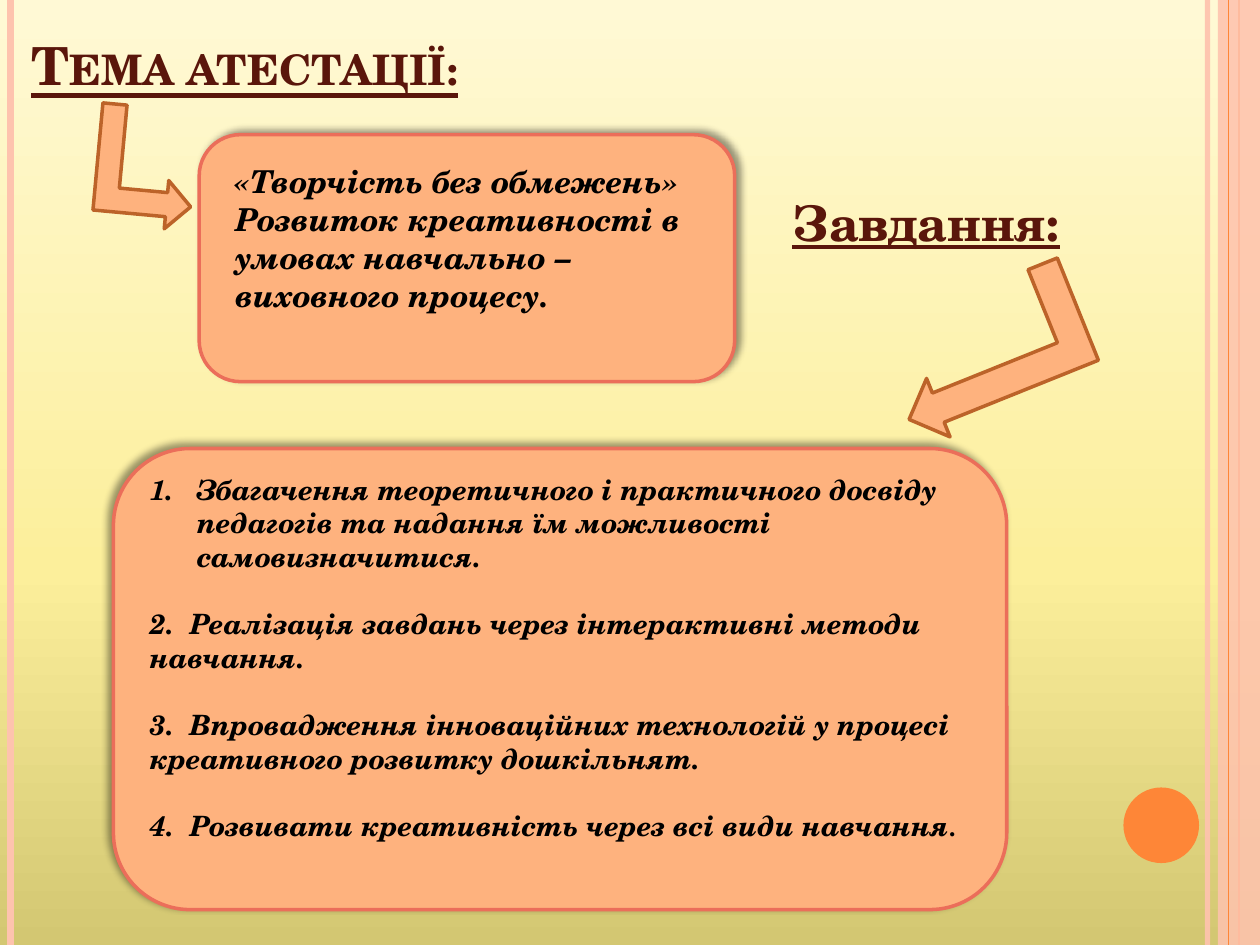
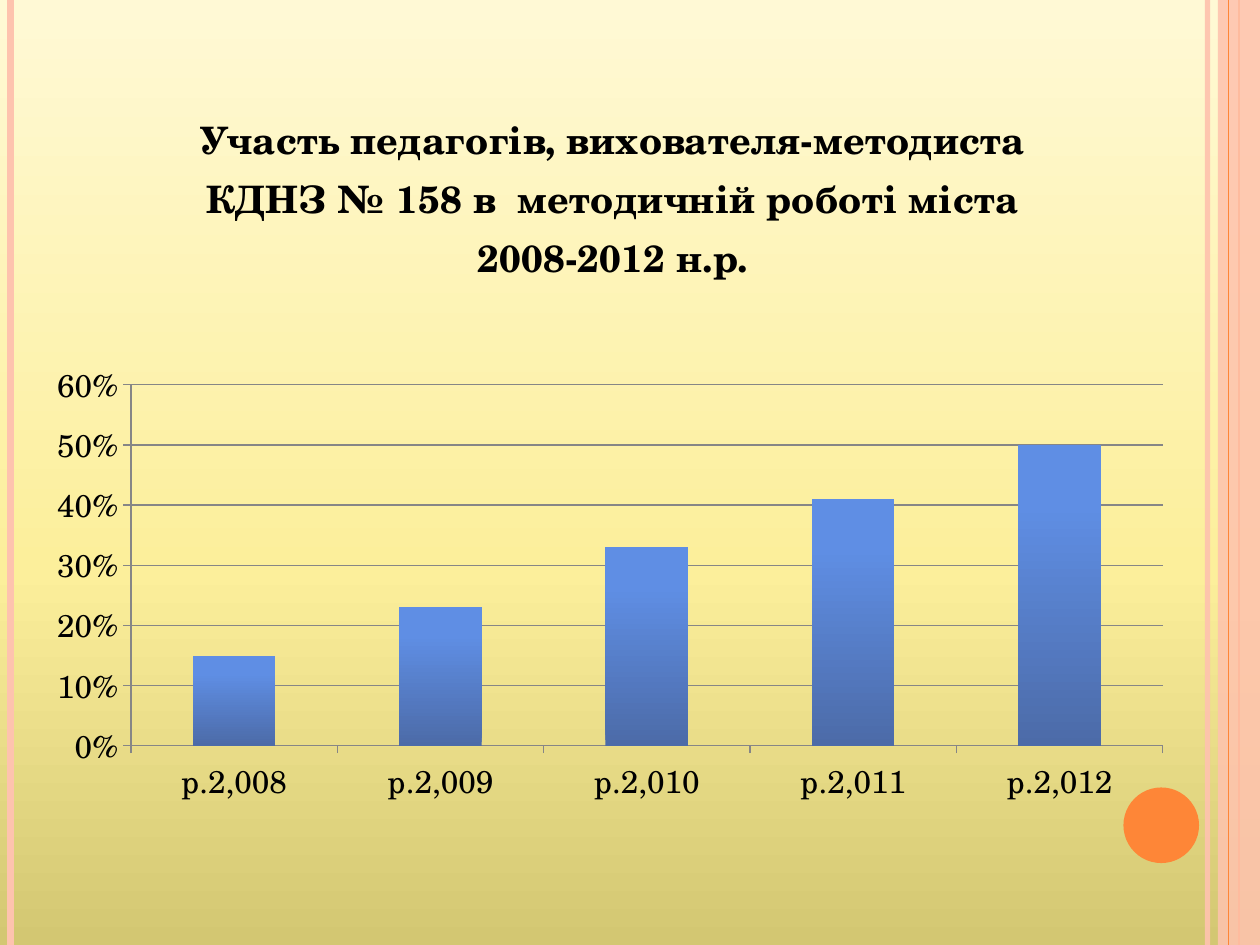
from lxml import etree
from pptx import Presentation
from pptx.chart.data import CategoryChartData
from pptx.dml.color import RGBColor
from pptx.enum import chart as charts, shapes, text
from pptx.oxml import ns
from pptx.util import Pt

FONT = "TeX Gyre Schola"
WIDTH, HEIGHT = 720, 540
COLORS = {
    "rose": "FEC3AE", "orange": "FE8637", "heading": "5A160B", "text": "000000",
    "card": "FEB27E", "card_line": "EB6E5A", "arrow_line": "BC6329", "axis": "868686",
}
BACKGROUND_STOPS = [(0, "D3C772"), (40, "FCEF9B"), (100, "FFF9D5")]
BAR_STOPS = [(0, "4C6BA8"), (80, "5F8EE4"), (100, "5F8EE4")]
TOPIC = [
    "«Творчість без обмежень»",
    "Розвиток креативності в умовах навчально – виховного процесу.",
]
TASKS = [
    "Збагачення теоретичного і практичного досвіду педагогів та надання їм "
    "можливості самовизначитися.",
    "2.  Реалізація завдань через інтерактивні методи навчання.",
    "3.  Впровадження інноваційних технологій у процесі креативного розвитку дошкільнят.",
    "4.  Розвивати креативність через всі види навчання",
]
CHART_TITLE = [
    "Участь педагогів, вихователя-методиста",
    "КДНЗ № 158 в  методичній роботі міста",
    "2008-2012 н.р.",
]
PARTICIPATION = {"р.2,008": 0.15, "р.2,009": 0.23, "р.2,010": 0.33,
                 "р.2,011": 0.41, "р.2,012": 0.5}


# Shared helpers
def rgb(name):
    return RGBColor.from_string(COLORS[name])


def add_xml(parent, tag, **attributes):
    child = etree.SubElement(parent, ns.qn(tag))
    for key, value in attributes.items():
        child.set(key, str(value))
    return child


def set_alpha(shape, percent):
    color = next(shape.element.iter(ns.qn("a:srgbClr")))
    add_xml(color, "a:alpha", val=percent * 1000)


def set_gradient(fill, root, stops):
    """Fill upwards, from the bottom stop to the top one."""
    fill.gradient()
    gradient = next(root.iter(ns.qn("a:gradFill")))
    for child in list(gradient):
        gradient.remove(child)
    stop_list = add_xml(gradient, "a:gsLst")
    for position, color in stops:
        stop = add_xml(stop_list, "a:gs", pos=position * 1000)
        add_xml(stop, "a:srgbClr", val=color)
    add_xml(gradient, "a:lin", ang=270 * 60000, scaled=0)


def style_font(font, size, color="text", bold=True, italic=False, underline=False):
    font.name, font.size = FONT, Pt(size)
    font.bold, font.italic, font.underline = bold, italic, underline
    font.color.rgb = rgb(color)


def add_shape(slide, kind, box, fill, line=None):
    shape = slide.shapes.add_shape(kind, *map(Pt, box))
    shape.shadow.inherit = False
    shape.fill.solid()
    shape.fill.fore_color.rgb = rgb(fill)
    if line:
        shape.line.color.rgb = rgb(line)
        shape.line.width = Pt(2)
    else:
        shape.line.fill.background()
    return shape


def add_text(slide, box, lines, size, gap=0, **style):
    frame = slide.shapes.add_textbox(*map(Pt, box)).text_frame
    frame.word_wrap = True
    for index, line in enumerate(lines):
        paragraph = frame.add_paragraph() if index else frame.paragraphs[0]
        paragraph.text = line
        paragraph.space_before = Pt(gap if index else 0)
        style_font(paragraph.font, size, **style)
    return frame


def add_rule(slide, x, color, width):
    rule = slide.shapes.add_connector(
        shapes.MSO_CONNECTOR.STRAIGHT, Pt(x), Pt(0), Pt(x), Pt(HEIGHT))
    rule.line.color.rgb = rgb(color)
    rule.line.width = Pt(width)
    add_xml(rule.element.spPr, "a:effectLst")
    return rule


# Background, side bands and page dot of every slide
def add_base_slide(presentation):
    slide = presentation.slides.add_slide(presentation.slide_layouts[6])
    set_gradient(slide.background.fill, slide.element, BACKGROUND_STOPS)
    set_alpha(add_rule(slide, 690, "rose", 3), 93)
    add_rule(slide, 6, "rose", 4.5)
    add_rule(slide, 708, "orange", 1.5)
    band = add_shape(slide, shapes.MSO_SHAPE.RECTANGLE, (696, 0, 24, HEIGHT), "rose")
    set_alpha(band, 87)
    add_rule(slide, 702, "orange", 0.75)
    add_shape(slide, shapes.MSO_SHAPE.OVAL, (642, 450, 43.2, 43.2), "orange")
    return slide


# Rounded card with a soft shadow and text set inside it
def add_card(slide, box, shadow_angle, inset, lines, size, gap=0):
    card = add_shape(slide, shapes.MSO_SHAPE.ROUNDED_RECTANGLE, box, "card", "card_line")
    effects = card.element.spPr.find(ns.qn("a:effectLst"))
    shadow = add_xml(effects, "a:outerShdw", blurRad=Pt(4), dist=Pt(3),
                     dir=shadow_angle * 60000, algn="ctr", rotWithShape=0)
    add_xml(add_xml(shadow, "a:srgbClr", val="000000"), "a:alpha", val=40000)
    left, top, width, height = box
    dx, dy, text_width = inset
    text_box = (left + dx, top + dy, text_width, height - 2 * dy)
    return add_text(slide, text_box, lines, size, gap, italic=True)


def add_bent_arrow(slide, box, rotation, flip=False):
    arrow = add_shape(slide, shapes.MSO_SHAPE.BENT_UP_ARROW, box, "card", "arrow_line")
    arrow.rotation = rotation
    if flip:
        arrow.element.spPr.find(ns.qn("a:xfrm")).set("flipV", "1")


# Slide 1: topic and tasks
def build_topic_slide(presentation):
    slide = add_base_slide(presentation)
    heading = add_text(slide, (10.8, 7.2, 309.6, 51.1), ["Тема атестації:"], 30,
                       color="heading", underline=True)
    heading.vertical_anchor = text.MSO_ANCHOR.BOTTOM
    heading.paragraphs[0].runs[0].font.underline = True
    heading.paragraphs[0].runs[0]._r.get_or_add_rPr().set("cap", "small")

    add_card(slide, (113.8, 77, 306, 141.1), 315, (13.6, 12.2, 278), TOPIC, 18)
    add_text(slide, (445.7, 106.6, 238.3, 41), ["Завдання:"], 28,
             color="heading", underline=True)
    tasks = add_card(slide, (64.8, 256.3, 510.5, 263.5), 225, (13.7, 10.1, 497.5),
                     TASKS, 16, gap=19.2)

    # Numbered first task, smaller full stop after the last one
    numbered = tasks.paragraphs[0]._p.get_or_add_pPr()
    numbered.set("marL", str(Pt(27)))
    numbered.set("indent", str(Pt(-27)))
    add_xml(numbered, "a:buFont", typeface="+mj-lt")
    add_xml(numbered, "a:buAutoNum", type="arabicPeriod")
    # Bullet settings come before the default run properties
    defaults = numbered.find(ns.qn("a:defRPr"))
    if defaults is not None:
        numbered.append(defaults)
    full_stop = tasks.paragraphs[-1].add_run()
    full_stop.text = "."
    full_stop.font.size = Pt(14)

    add_bent_arrow(slide, (49, 67.7, 68.4, 55.4), 95.3)
    add_bent_arrow(slide, (529.2, 145.4, 72, 113), 68.1, flip=True)


def set_layout(parent, values, inner=False):
    """Place a chart part by fractions of the chart area."""
    for old in parent.findall(ns.qn("c:layout")):
        parent.remove(old)
    layout = etree.Element(ns.qn("c:layout"))
    manual = add_xml(layout, "c:manualLayout")
    if inner:
        add_xml(manual, "c:layoutTarget", val="inner")
    for key in "xy":
        add_xml(manual, f"c:{key}Mode", val="edge")
    for key, value in values.items():
        add_xml(manual, f"c:{key}", val=value)
    title_text = parent.find(ns.qn("c:tx"))
    parent.insert(0 if title_text is None else 1, layout)


# Participation column chart
def add_participation_chart(slide, box):
    data = CategoryChartData(number_format="0%")
    data.categories = list(PARTICIPATION)
    data.add_series(" ".join(CHART_TITLE), list(PARTICIPATION.values()))
    chart = slide.shapes.add_chart(
        charts.XL_CHART_TYPE.COLUMN_CLUSTERED, *map(Pt, box), data).chart
    chart.has_legend = False
    style_font(chart.font, 18, bold=False)

    chart.has_title = True
    frame = chart.chart_title.text_frame
    for index, line in enumerate(CHART_TITLE):
        paragraph = frame.add_paragraph() if index else frame.paragraphs[0]
        run = paragraph.add_run()
        run.text = line
        paragraph.alignment = text.PP_ALIGN.CENTER
        paragraph.line_spacing = 1.3
        style_font(paragraph.font, 21.6)
        style_font(run.font, 21.6)
    chart.chart_title.include_in_layout = False
    set_layout(next(chart.element.iter(ns.qn("c:title"))), {"x": 0.14, "y": 0.05})
    set_layout(next(chart.element.iter(ns.qn("c:plotArea"))),
               {"x": 0.083, "y": 0.424, "w": 0.897, "h": 0.479}, inner=True)

    plot = chart.plots[0]
    plot.gap_width = 150
    plot.vary_by_categories = False
    set_gradient(plot.series[0].format.fill, chart.element, BAR_STOPS)

    values = chart.value_axis
    values.minimum_scale, values.maximum_scale, values.major_unit = 0, 0.6, 0.1
    values.tick_labels.number_format = "0%"
    values.tick_labels.number_format_is_linked = False
    values.has_major_gridlines = True
    for axis in (values, chart.category_axis):
        axis.major_tick_mark = charts.XL_TICK_MARK.OUTSIDE
    for lined in (values, chart.category_axis, values.major_gridlines):
        lined.format.line.color.rgb = rgb("axis")
        lined.format.line.width = Pt(0.75)


# Slide 2: participation in methodical work
def build_chart_slide(presentation):
    slide = add_base_slide(presentation)
    add_participation_chart(slide, (20.2, 37.4, 657.4, 430.6))


def main():
    presentation = Presentation()
    presentation.slide_width, presentation.slide_height = Pt(WIDTH), Pt(HEIGHT)
    build_topic_slide(presentation)
    build_chart_slide(presentation)
    presentation.save("out.pptx")


if __name__ == "__main__":
    main()
